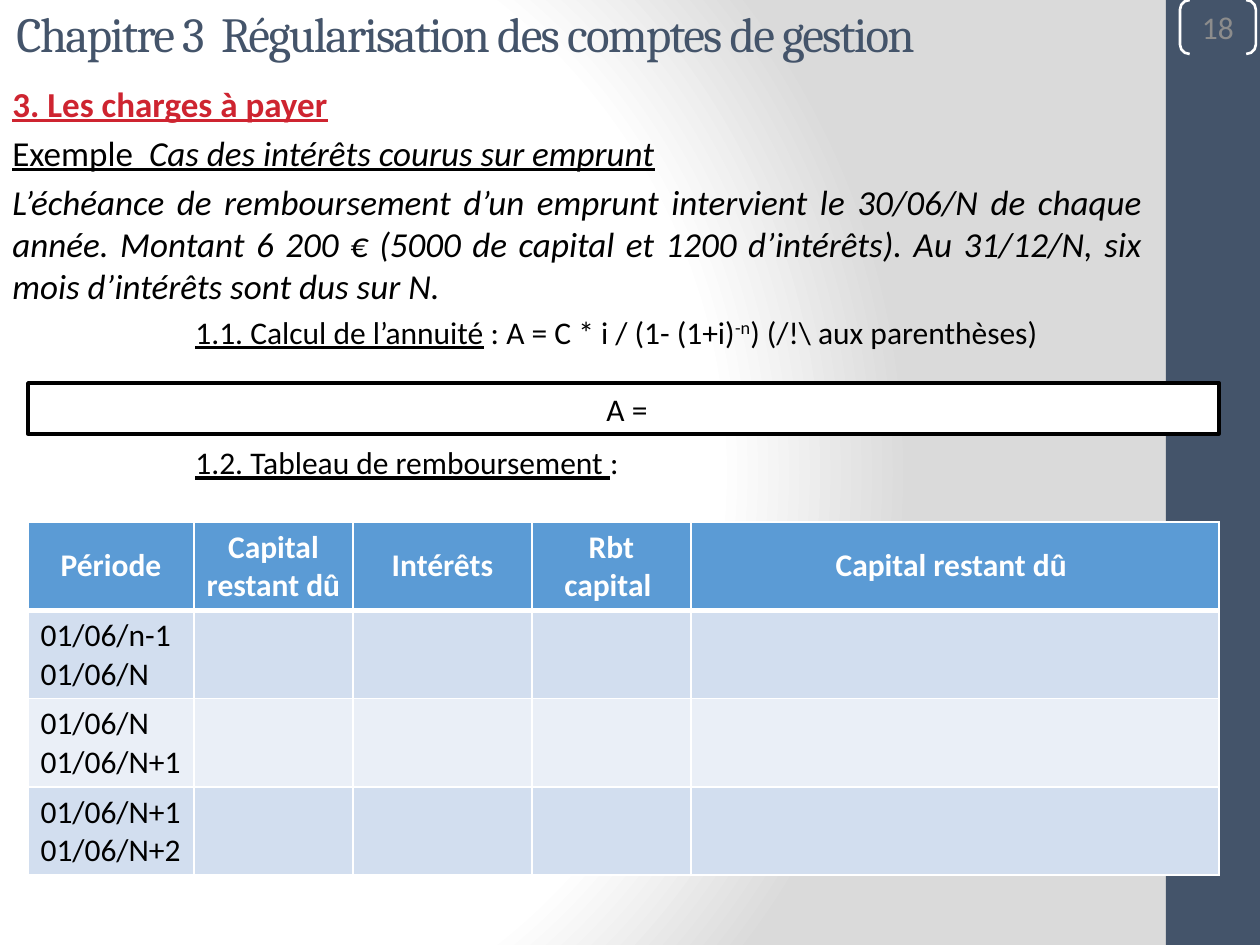
from lxml import etree
from pptx import Presentation
from pptx import util as u
from pptx.dml.color import RGBColor
from pptx.enum import shapes, text
from pptx.oxml import parse_xml
from pptx.oxml.ns import qn

PX = u.Inches(1) / 126
BLACK, WHITE, NAVY, RED = "000000", "FFFFFF", "44546A", "CE2430"
CENTER, JUSTIFY = text.PP_ALIGN.CENTER, text.PP_ALIGN.JUSTIFY
MIDDLE = text.MSO_ANCHOR.MIDDLE


def emu(*lengths):
    return [u.Emu(round(length * PX)) for length in lengths]


def add_run(paragraph, words, color=BLACK, **values):
    run = paragraph.add_run()
    run.text = words
    run.font.color.rgb = RGBColor.from_string(color)
    for name, value in {"name": "Calibri", "size": u.Pt(18), **values}.items():
        setattr(run.font, name, value)
    return run


presentation = Presentation()
presentation.slide_width, presentation.slide_height = emu(1260, 945)
slide = presentation.slides.add_slide(presentation.slide_layouts[6])

slide.background.fill.gradient()
gradient = slide.background.fill._fill._gradFill
stops = "".join(
    f'<a:gs pos="{position * 1000}"><a:srgbClr val="{color}"/></a:gs>'
    for position, color in [(0, WHITE), (75, WHITE), (100, "DADADA")])
gradient.getparent().replace(gradient, parse_xml(
    '<a:gradFill xmlns:a="http://schemas.openxmlformats.org/drawingml/2006/main" rotWithShape="1">'
    f'<a:gsLst>{stops}</a:gsLst><a:path path="circle">'
    '<a:fillToRect l="20000" t="50000" r="100000" b="50000"/></a:path></a:gradFill>'))

RECTANGLE, BRACKETS = shapes.MSO_SHAPE.RECTANGLE, shapes.MSO_SHAPE.DOUBLE_BRACKET
for kind, box, fill, line, width, words, color in [
        (RECTANGLE, (1166, 0, 94, 945), NAVY, None, 0, "", WHITE),
        (BRACKETS, (1180, 0, 76, 54), None, WHITE, 1.5, "18", "8C8C8C"),
        (RECTANGLE, (28, 383, 1191, 51), WHITE, BLACK, 2, " A =", BLACK)]:
    shape = slide.shapes.add_shape(kind, *emu(*box))
    shape.shadow.inherit = False
    if fill:
        shape.fill.solid()
        shape.fill.fore_color.rgb = RGBColor.from_string(fill)
    else:
        shape.fill.background()
    if line:
        shape.line.color.rgb = RGBColor.from_string(line)
        shape.line.width = u.Pt(width)
    else:
        shape.line.fill.background()
    frame = shape.text_frame
    frame.vertical_anchor = MIDDLE
    if kind == BRACKETS:
        shape.adjustments[0] = 0.18
        for side in ("left", "top", "right", "bottom"):
            setattr(frame, f"margin_{side}", 0)
    if words:
        frame.paragraphs[0].alignment = CENTER
        add_run(frame.paragraphs[0], words, color)

title = slide.shapes.add_textbox(*emu(4, -3, 1050, 78)).text_frame
title.word_wrap = True
run = add_run(title.paragraphs[0], "Chapitre 3  Régularisation des comptes de gestion",
              NAVY, name="Cambria", size=u.Pt(28))
run.font._element.set("spc", "-100")

body = slide.shapes.add_textbox(*emu(0, 76, 1155, 824)).text_frame
body.word_wrap = True
large = {"size": u.Pt(20)}
underlined = {"underline": True}
lines = [
    (0, 0, None, [("3. Les charges à payer", {**large, **underlined, "bold": True, "color": RED})]),
    (4, 0, None, [("Exemple  ", {**large, **underlined}),
                  ("Cas des intérêts courus sur emprunt", {**large, **underlined, "italic": True})]),
    (4, 0, JUSTIFY, [("L’échéance de remboursement d’un emprunt intervient le 30/06/N de chaque année. "
                      "Montant 6 200 € (5000 de capital et 1200 d’intérêts). Au 31/12/N, six mois "
                      "d’intérêts sont dus sur N.", {**large, "italic": True})]),
    (3.6, 183, JUSTIFY, [("1.1. Calcul de l’annuité", underlined), (" : A = C * i / (1- (1+i)", {}),
                         ("-n", {}), (") (/!\\ aux parenthèses)", {})]),
    (53, 183, JUSTIFY, [("1.2. Tableau de remboursement ", underlined), (":", {})]),
]
for index, (space, indent, alignment, runs) in enumerate(lines):
    paragraph = body.add_paragraph() if index else body.paragraphs[0]
    paragraph.space_before = u.Pt(space)
    paragraph.alignment = alignment
    paragraph._p.get_or_add_pPr().set("marL", str(emu(indent)[0]))
    for words, values in runs:
        run = add_run(paragraph, words, **values)
        if words == "-n":
            run.font._element.set("baseline", "30000")

rows = [
    ["Période", "Capital restant dû", "Intérêts", "Rbt capital ", "Capital restant dû "],
    ["01/06/n-1\n01/06/N"],
    ["01/06/N\n01/06/N+1"],
    ["01/06/N+1\n01/06/N+2"],
]
row_fills = ["5B9BD5", "D2DEEF", "EAEFF7", "D2DEEF"]
widths = emu(166, 159, 179, 159, 528)
table = slide.shapes.add_table(4, 5, *emu(28, 522, 1191, 352)).table
for column, width in zip(table.columns, widths):
    column.width = width
for row_index, (entries, fill) in enumerate(zip(rows, row_fills)):
    header = row_index == 0
    table.rows[row_index].height = emu(88)[0]
    for column_index in range(len(widths)):
        cell = table.cell(row_index, column_index)
        properties = cell._tc.get_or_add_tcPr()
        for side in ("L", "R", "T", "B"):
            thick = (header and side == "B") or (row_index == 1 and side == "T")
            border = etree.SubElement(properties, qn(f"a:ln{side}"), w=str(u.Pt(3 if thick else 1)))
            solid = etree.SubElement(border, qn("a:solidFill"))
            etree.SubElement(solid, qn("a:srgbClr"), val=WHITE)
        cell.fill.solid()
        cell.fill.fore_color.rgb = RGBColor.from_string(fill)
        if header:
            cell.vertical_anchor = MIDDLE
        if column_index < len(entries):
            for index, words in enumerate(entries[column_index].split("\n")):
                frame = cell.text_frame
                paragraph = frame.add_paragraph() if index else frame.paragraphs[0]
                paragraph.alignment = CENTER if header else None
                add_run(paragraph, words, WHITE if header else BLACK, bold=header)

presentation.save("out.pptx")
